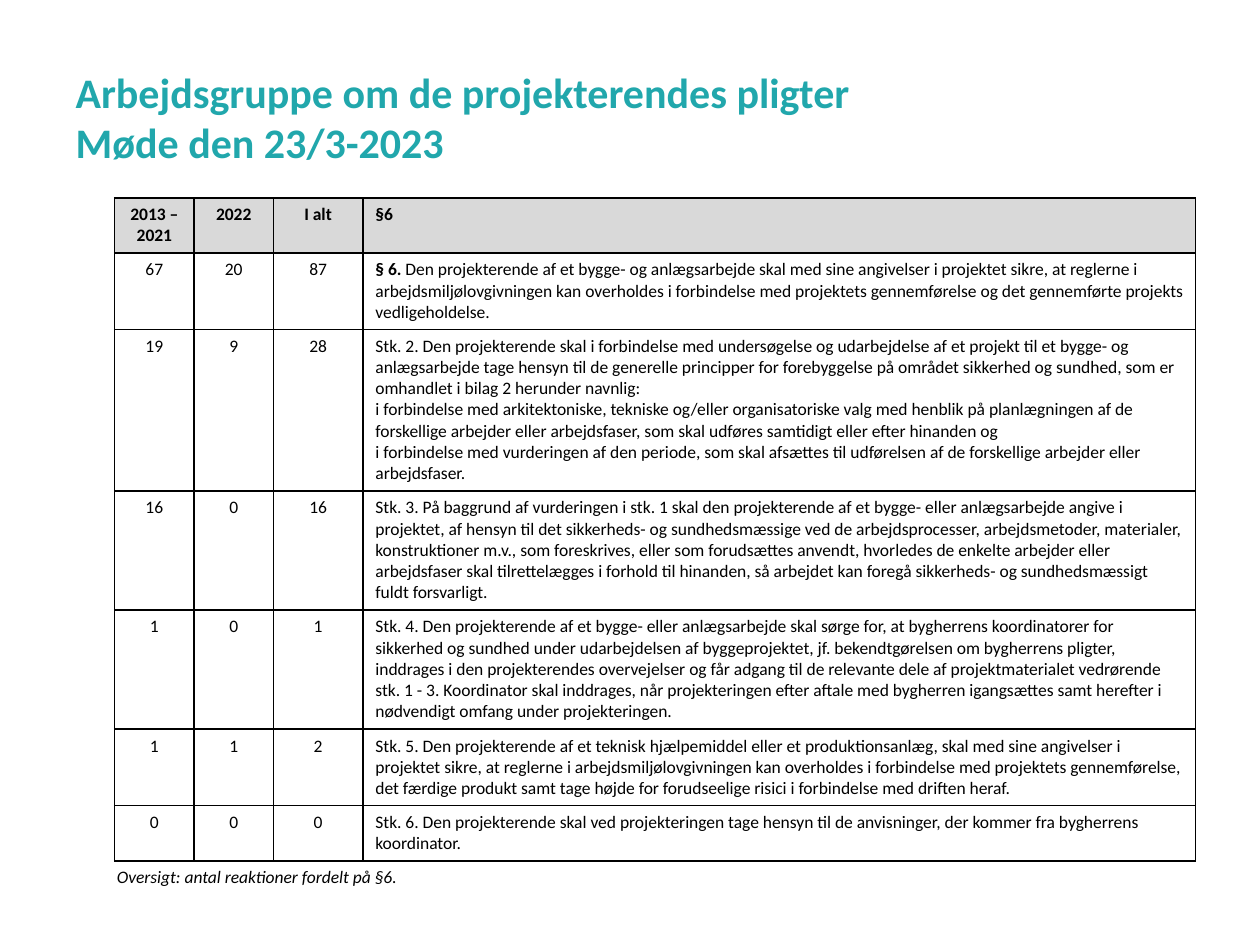
from lxml import etree
from pptx import Presentation
from pptx.dml.color import RGBColor
from pptx.enum.text import MSO_ANCHOR, PP_ALIGN
from pptx.oxml import parse_xml
from pptx.util import Inches, Pt

LEFT, CENTER = PP_ALIGN.LEFT, PP_ALIGN.CENTER
MIDDLE = MSO_ANCHOR.MIDDLE
DRAWING_NS = "http://schemas.openxmlformats.org/drawingml/2006/main"


def write(paragraph, text, size=10, color="000000", bold=False, italic=False, align=LEFT):
    paragraph.alignment = align
    for index, line in enumerate(text.split("\n")):
        if index:
            paragraph.add_line_break()
        run = paragraph.add_run()
        run.text = line
        run.font.name = "Calibri"
        run.font.size = Pt(size)
        run.font.bold = bold
        run.font.italic = italic
        run.font.color.rgb = RGBColor.from_string(color)


def add_borders(cell, color="000000", width=1):
    properties = cell._tc.get_or_add_tcPr()
    for position, side in enumerate(("lnL", "lnR", "lnT", "lnB")):
        border = parse_xml(f'<a:{side} xmlns:a="{DRAWING_NS}" w="{Pt(width)}"/>')
        solid = etree.SubElement(border, f"{{{DRAWING_NS}}}solidFill")
        etree.SubElement(solid, f"{{{DRAWING_NS}}}srgbClr", val=color)
        properties.insert(position, border)


headings = ["2013 – 2021", "2022", "I alt", "§6"]
provisions = [
    (67, 20, 87, 3, [
        "Den projekterende af et bygge- og anlægsarbejde skal med sine angivelser i projektet sikre, at reglerne i arbejdsmiljølovgivningen kan overholdes i forbindelse med projektets gennemførelse og det gennemførte projekts vedligeholdelse."]),
    (19, 9, 28, 7, [
        "Stk. 2. Den projekterende skal i forbindelse med undersøgelse og udarbejdelse af et projekt til et bygge- og anlægsarbejde tage hensyn til de generelle principper for forebyggelse på området sikkerhed og sundhed, som er omhandlet i bilag 2 herunder navnlig:",
        "i forbindelse med arkitektoniske, tekniske og/eller organisatoriske valg med henblik på planlægningen af de forskellige arbejder eller arbejdsfaser, som skal udføres samtidigt eller efter hinanden og",
        "i forbindelse med vurderingen af den periode, som skal afsættes til udførelsen af de forskellige arbejder eller arbejdsfaser."]),
    (16, 0, 16, 5, [
        "Stk. 3. På baggrund af vurderingen i stk. 1 skal den projekterende af et bygge- eller anlægsarbejde angive i projektet, af hensyn til det sikkerheds- og sundhedsmæssige ved de arbejdsprocesser, arbejdsmetoder, materialer, konstruktioner m.v., som foreskrives, eller som forudsættes anvendt, hvorledes de enkelte arbejder eller arbejdsfaser skal tilrettelægges i forhold til hinanden, så arbejdet kan foregå sikkerheds- og sundhedsmæssigt fuldt forsvarligt."]),
    (1, 0, 1, 5, [
        "Stk. 4. Den projekterende af et bygge- eller anlægsarbejde skal sørge for, at bygherrens koordinatorer for sikkerhed og sundhed under udarbejdelsen af byggeprojektet, jf. bekendtgørelsen om bygherrens pligter, inddrages i den projekterendes overvejelser og får adgang til de relevante dele af projektmaterialet vedrørende stk. 1 - 3. Koordinator skal inddrages, når projekteringen efter aftale med bygherren igangsættes samt herefter i nødvendigt omfang under projekteringen."]),
    (1, 1, 2, 3, [
        "Stk. 5. Den projekterende af et teknisk hjælpemiddel eller et produktionsanlæg, skal med sine angivelser i projektet sikre, at reglerne i arbejdsmiljølovgivningen kan overholdes i forbindelse med projektets gennemførelse, det færdige produkt samt tage højde for forudseelige risici i forbindelse med driften heraf."]),
    (0, 0, 0, 2, [
        "Stk. 6. Den projekterende skal ved projekteringen tage hensyn til de anvisninger, der kommer fra bygherrens koordinator."]),
]

prs = Presentation()
prs.slide_width, prs.slide_height = Inches(10), Inches(7.5)
slide = prs.slides.add_slide(prs.slide_layouts[5])

title = slide.shapes.title
title.left, title.top, title.width, title.height = Inches(0.5), Inches(0.3), Inches(9), Inches(1.25)
title.text_frame.vertical_anchor = MIDDLE
write(title.text_frame.paragraphs[0],
      "Arbejdsgruppe om de projekterendes pligter \nMøde den 23/3-2023",
      size=24, color="21A7AC", bold=True)

reactions = slide.shapes.add_table(
    len(provisions) + 1, len(headings),
    Inches(0.91), Inches(1.57), Inches(8.58), Inches(5.2)).table
for column, width in zip(reactions.columns, (0.63, 0.63, 0.71, 6.61)):
    column.width = Inches(width)

line_counts = [2] + [provision[3] for provision in provisions]
for row, line_count in zip(reactions.rows, line_counts):
    row.height = Inches(0.1 + 0.169 * line_count)

rows = [[[heading] for heading in headings]]
for earlier, latest, total, _, wording in provisions:
    rows.append([[str(earlier)], [str(latest)], [str(total)], wording])

for row_index, row in enumerate(rows):
    is_header = row_index == 0
    for column_index, paragraphs in enumerate(row):
        cell = reactions.cell(row_index, column_index)
        if is_header:
            cell.fill.solid()
            cell.fill.fore_color.rgb = RGBColor.from_string("D9D9D9")
        else:
            cell.fill.background()
        add_borders(cell)
        frame = cell.text_frame
        for index, text in enumerate(paragraphs):
            paragraph = frame.add_paragraph() if index else frame.paragraphs[0]
            if (row_index, column_index) == (1, 3):
                write(paragraph, "§ 6. ", bold=True)
            write(paragraph, text, bold=is_header, align=CENTER if column_index < 3 else LEFT)

caption = slide.shapes.add_textbox(Inches(0.83), Inches(6.81), Inches(8.59), Inches(0.57))
caption.text_frame.word_wrap = True
caption_line = caption.text_frame.paragraphs[0]
caption_line.line_spacing = 1.07
caption_line.space_after = Pt(8)
write(caption_line, "Oversigt: antal reaktioner fordelt på §6.", italic=True)

prs.save("out.pptx")
